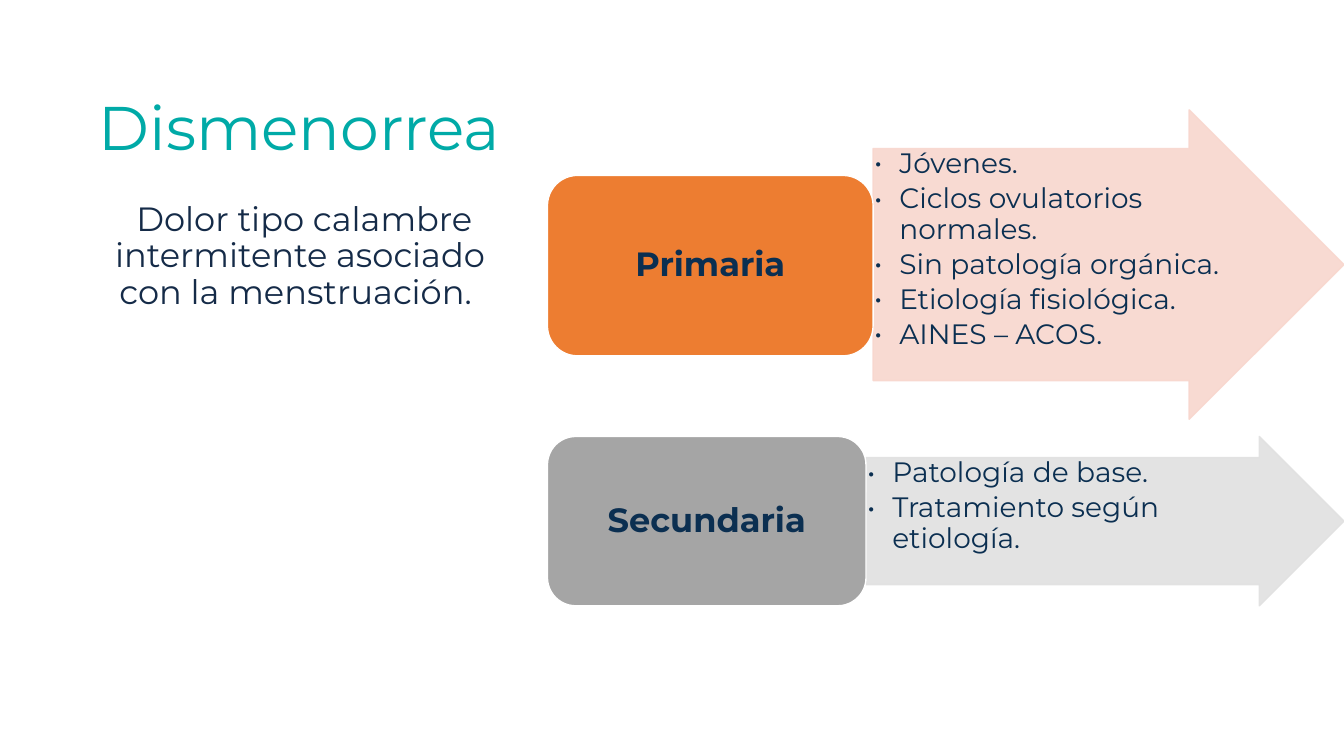
from lxml import etree
from pptx import Presentation
from pptx.dml.color import RGBColor
from pptx.enum.shapes import MSO_SHAPE
from pptx.enum.text import MSO_ANCHOR, PP_ALIGN
from pptx.oxml.ns import qn
from pptx.util import Inches, Pt

ROUNDED, ARROW = MSO_SHAPE.ROUNDED_RECTANGLE, MSO_SHAPE.RIGHT_ARROW
TOP, MIDDLE = MSO_ANCHOR.TOP, MSO_ANCHOR.MIDDLE
LEFT, CENTER = PP_ALIGN.LEFT, PP_ALIGN.CENTER

FONT = "Montserrat"
NAVY, INK, TEAL, WHITE = "0B2F51", "152B48", "00AAA7", "FFFFFF"
RIGHT_EDGE = 13.33
BOX_LEFT = 5.43
ARROW_OPACITY = 90

# Box: top, width, height; arrow: top, height
TYPES = [
    dict(name="Primaria", box=(1.74, 3.23, 1.79), color="ED7D31",
         arrow=(1.09, 3.07), tint="F8D7CE",
         traits=["Jóvenes.", "Ciclos ovulatorios normales.", "Sin patología orgánica.",
                 "Etiología fisiológica.", "AINES – ACOS."]),
    dict(name="Secundaria", box=(4.33, 3.16, 1.68), color="A5A5A5",
         arrow=(4.33, 1.68), tint="E1E1E1",
         traits=["Patología de base.", "Tratamiento según etiología."]),
]


def rgb(value):
    return RGBColor.from_string(value)


def set_all(target, values):
    for name, value in values.items():
        setattr(target, name, value)


def add_bullet(paragraph):
    properties = paragraph._p.get_or_add_pPr()
    properties.set("marL", str(Inches(0.25)))
    properties.set("indent", str(-Inches(0.25)))
    etree.SubElement(properties, qn("a:buFont")).set("typeface", FONT)
    etree.SubElement(properties, qn("a:buChar")).set("char", "•")


def write(frame, lines, size, color, anchor=MIDDLE, align=CENTER, bold=False,
          bullets=False, gap=0):
    set_all(frame, dict(word_wrap=True, vertical_anchor=anchor))
    for index, line in enumerate(lines):
        paragraph = frame.add_paragraph() if index else frame.paragraphs[0]
        paragraph.text = line
        if bullets:
            add_bullet(paragraph)
        set_all(paragraph, dict(alignment=align, line_spacing=0.9, space_after=Pt(gap)))
        font = paragraph.runs[0].font
        set_all(font, dict(name=FONT, size=Pt(size), bold=bold))
        font.color.rgb = rgb(color)


def add_text(slide, bounds, lines, size, color, anchor, **style):
    frame = slide.shapes.add_textbox(*map(Inches, bounds)).text_frame
    write(frame, lines, size, color, anchor, **style)
    return frame


def add_block(slide, kind, bounds, fill, line, opacity=100):
    block = slide.shapes.add_shape(kind, *map(Inches, bounds))
    block.shadow.inherit = False
    block.fill.solid()
    block.line.fill.solid()
    block.line.width = Pt(1)
    for paint, color in ((block.fill, fill), (block.line.fill, line)):
        paint.fore_color.rgb = rgb(color)
    if opacity < 100:
        for color in block._element.spPr.iter(qn("a:srgbClr")):
            etree.SubElement(color, qn("a:alpha")).set("val", str(opacity * 1000))
    return block


def add_traits_arrow(slide, left, top, height, tint, traits):
    width = RIGHT_EDGE - left
    arrow = add_block(slide, ARROW, (left, top, width, height), tint, tint, ARROW_OPACITY)
    arrow.adjustments[0] = 0.75
    arrow.adjustments[1] = 0.5
    # The list fills the shaft's height and stops short of the slanted head
    bounds = (left, top + height / 8, width - height * 3 / 8, height * 3 / 4)
    frame = add_text(slide, bounds, traits, 20, NAVY, TOP, align=LEFT, bullets=True, gap=3.5)
    edge = Inches(0.01)
    set_all(frame, dict(margin_left=edge, margin_top=edge, margin_right=edge,
                        margin_bottom=edge))


def add_type(slide, kind):
    top, width, height = kind["box"]
    add_traits_arrow(slide, BOX_LEFT + width, *kind["arrow"], kind["tint"], kind["traits"])
    label = add_block(slide, ROUNDED, (BOX_LEFT, top, width, height), kind["color"], WHITE)
    write(label.text_frame, [kind["name"]], 24, NAVY, bold=True)


def main():
    deck = Presentation()
    set_all(deck, dict(slide_width=Inches(RIGHT_EDGE), slide_height=Inches(7.5)))
    slide = deck.slides.add_slide(deck.slide_layouts[6])

    # Title and definition
    add_text(slide, (0.54, 0.57, 4.86, 1.45), ["Dismenorrea"], 44, TEAL, MIDDLE)
    add_text(slide, (0.95, 1.96, 4.05, 1.59),
             [" Dolor tipo calambre intermitente asociado con la menstruación. "],
             24, INK, TOP)

    # Types with their traits
    for kind in TYPES:
        add_type(slide, kind)

    deck.save("out.pptx")


if __name__ == "__main__":
    main()
